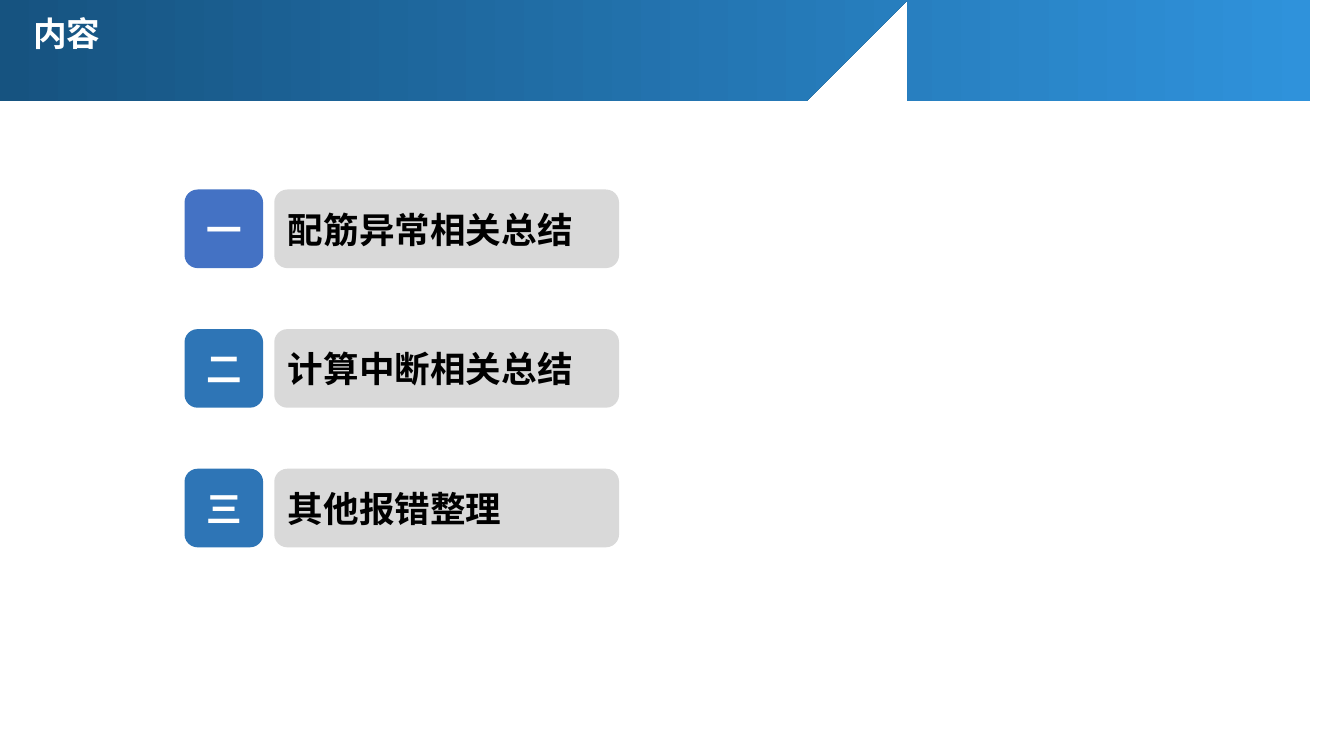
from pptx import Presentation
from pptx import util as u
from pptx.dml.color import RGBColor
from pptx.enum import shapes, text
from pptx.oxml.ns import qn

COLORS = {
    "dark": "165380",
    "light": "2F92DB",
    "first": "4472C4",
    "number": "2E75B6",
    "panel": "D9D9D9",
    "white": "FFFFFF",
    "black": "000000",
}
CJK_FONT = "Noto Sans CJK SC"
TOPICS = [
    ("一", "配筋异常相关总结", "first"),
    ("二", "计算中断相关总结", "number"),
    ("三", "其他报错整理", "number"),
]
WIDTH, HEIGHT = 13.33, 7.5


def color(name):
    return RGBColor.from_string(COLORS[name])


def write(shape, words, size, ink, latin, align):
    para = shape.text_frame.paragraphs[0]
    para.text = words
    para.alignment = align
    font = para.font
    font.name, font.size, font.bold = latin, u.Pt(size), True
    font.color.rgb = color(ink)
    east = font._element.makeelement(qn("a:ea"), {"typeface": CJK_FONT})
    font._element.find(qn("a:latin")).addnext(east)


def add_header(page, left, top, width, height):
    slant, pitch, stripe = 0.23, 0.37, 0.2
    first_cut = left + 0.642 * width
    cuts = [first_cut + pitch * i for i in range(3)]
    starts = [left] + [cut + stripe for cut in cuts]
    ends = cuts + [left + width]
    bottom = top + height
    builder = page.shapes.build_freeform(scale=u.Inches(1))
    for i, (start, end) in enumerate(zip(starts, ends)):
        start_slant = slant if i > 0 else 0
        end_slant = slant if i < len(cuts) else 0
        builder.move_to(start, top)
        builder.add_line_segments([
            (end, top), (end - end_slant, bottom),
            (start - start_slant, bottom),
        ])
    band = builder.convert_to_shape()
    band.shadow.inherit = False
    band.line.fill.background()
    band.fill.gradient()
    band.fill.gradient_angle = 0
    for stop, name in zip(band.fill.gradient_stops, ("dark", "light")):
        stop.color.rgb = color(name)

    title = page.shapes.title
    title.left, title.top = u.Inches(left + 0.23), u.Inches(top + 0.08)
    title.width, title.height = u.Inches(0.905 * width), u.Inches(0.8 * height)
    frame = title.text_frame
    frame.auto_size = text.MSO_AUTO_SIZE.NONE
    frame.vertical_anchor = text.MSO_ANCHOR.TOP
    write(title, "内容", 24, "white", "Calibri", text.PP_ALIGN.LEFT)
    page.shapes._spTree.append(title._element)


def add_card(page, left, top, width, height, words, fill, ink, align):
    card = page.shapes.add_shape(
        shapes.MSO_SHAPE.ROUNDED_RECTANGLE,
        *(u.Inches(length) for length in (left, top, width, height)))
    card.shadow.inherit = False
    card.fill.solid()
    card.fill.fore_color.rgb = color(fill)
    card.line.fill.background()
    card.text_frame.vertical_anchor = text.MSO_ANCHOR.MIDDLE
    write(card, words, 25.4, ink, CJK_FONT, align)


def add_agenda(page, left, top, width, height):
    side, gap = 0.78, 0.11
    step = (height - side) / (len(TOPICS) - 1)
    for row, (number, topic, fill) in enumerate(TOPICS):
        y = top + row * step
        add_card(page, left, y, side, side,
                 number, fill, "white", text.PP_ALIGN.CENTER)
        add_card(page, left + side + gap, y, width - side - gap, side,
                 topic, "panel", "black", text.PP_ALIGN.LEFT)


def main():
    deck = Presentation()
    deck.slide_width, deck.slide_height = u.Inches(WIDTH), u.Inches(HEIGHT)
    page = deck.slides.add_slide(deck.slide_layouts[5])
    add_header(page, 0, 0, WIDTH, 0.63)
    add_agenda(page, 1.83, 1.88, 4.31, 3.55)
    deck.save("out.pptx")


if __name__ == "__main__":
    main()
